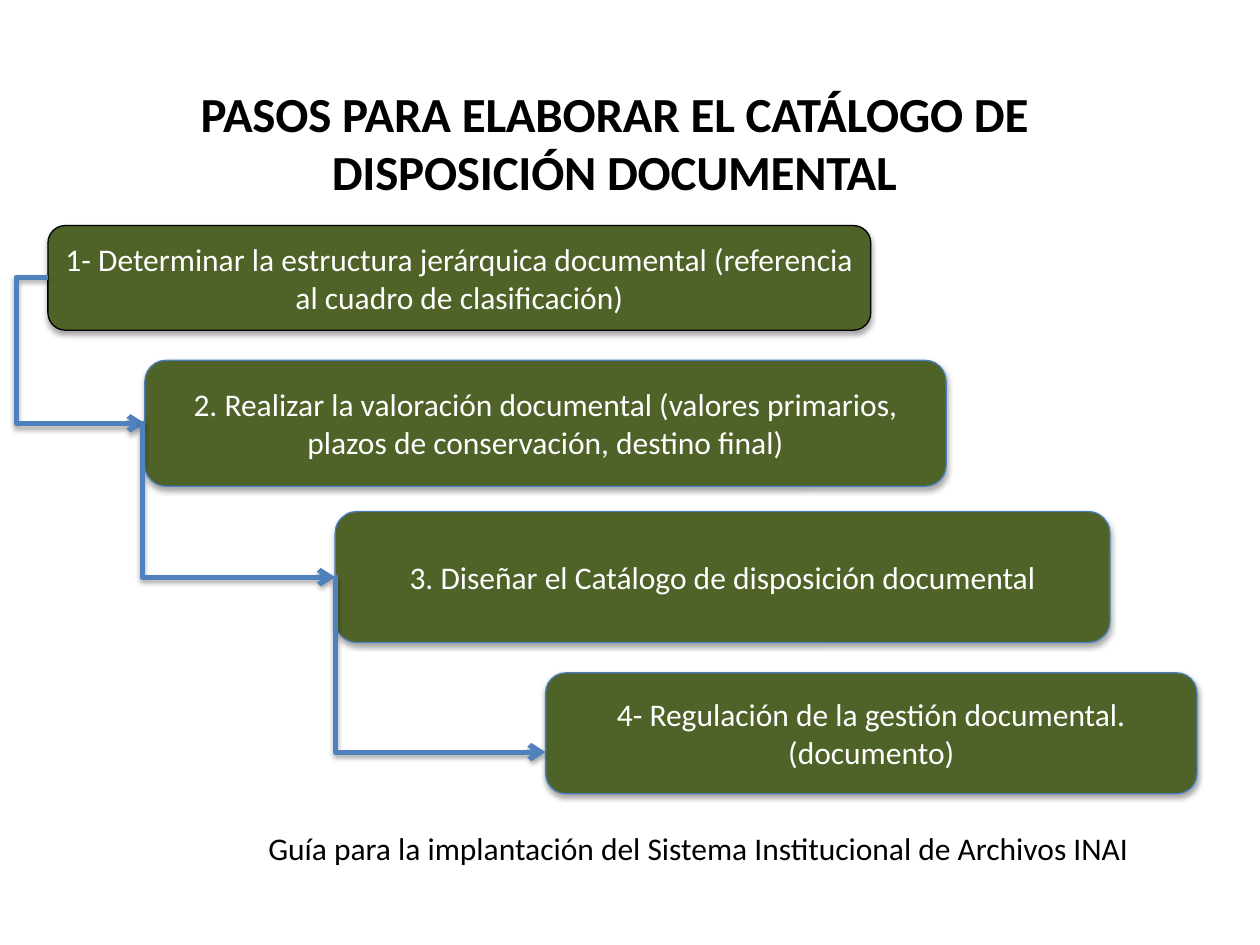
from lxml import etree
from pptx import Presentation
from pptx import util as u
from pptx.dml.color import RGBColor
from pptx.enum import shapes, text
from pptx.oxml.ns import qn

Pt = u.Pt
COLORS = {"box": "4F6228", "edge": "4B7EBC", "arrow": "4F81BD",
          "black": "000000", "white": "FFFFFF"}


def add_text(shape, words, size, color, align, bold=False):
    paragraph = shape.text_frame.paragraphs[0]
    paragraph.alignment = align
    run = paragraph.add_run()
    run.text = words
    run.font.name = "Calibri"
    run.font.size = Pt(size)
    run.font.bold = bold
    run.font.color.rgb = RGBColor.from_string(COLORS[color])
    return run


def add_shadow(properties):
    """Soft shadow straight below; call once fill and line are set."""
    effects = etree.SubElement(properties, qn("a:effectLst"))
    shadow = etree.SubElement(effects, qn("a:outerShdw"), blurRad=str(Pt(3.1)),
                              dist=str(Pt(1.8)), dir="5400000", rotWithShape="0")
    color = etree.SubElement(shadow, qn("a:srgbClr"), val=COLORS["black"])
    etree.SubElement(color, qn("a:alpha"), val="35000")


presentation = Presentation()
presentation.slide_width, presentation.slide_height = Pt(720), Pt(540)
slide = presentation.slides.add_slide(presentation.slide_layouts[6])

# Title
title = slide.shapes.add_textbox(Pt(101.5), Pt(46.1), Pt(499), Pt(69.1))
frame = title.text_frame
frame.word_wrap = True
frame.vertical_anchor = text.MSO_ANCHOR.MIDDLE
frame.margin_left = frame.margin_right = frame.margin_bottom = 0
frame.margin_top = Pt(0.9)
run = add_text(title, "PASOS PARA ELABORAR EL CATÁLOGO DE DISPOSICIÓN DOCUMENTAL",
               28, "black", text.PP_ALIGN.CENTER, bold=True)
run.font._element.set("spc", "-10")

# Source line
source = slide.shapes.add_textbox(Pt(146.2), Pt(470.2), Pt(507.6), Pt(28.8))
source.text_frame.word_wrap = False
add_text(source, "Guía para la implantación del Sistema Institucional de Archivos INAI",
         18, "black", text.PP_ALIGN.LEFT)

# Steps: left, top, width, height, edge colour, wording
steps = [
    (27.4, 128.9, 470.2, 59.8, "black",
     "1- Determinar la estructura jerárquica documental (referencia al cuadro de clasificación)"),
    (82.8, 205.9, 457.9, 72, "edge",
     "2. Realizar la valoración documental (valores primarios, plazos de conservación, destino final)"),
    (191.5, 292.3, 442.8, 74.9, "edge",
     "3. Diseñar el Catálogo de disposición documental"),
    (311.8, 384.5, 372.2, 69.1, "edge",
     "4- Regulación de la gestión documental. (documento)"),
]
for left, top, width, height, edge, words in steps:
    box = slide.shapes.add_shape(shapes.MSO_SHAPE.ROUNDED_RECTANGLE,
                                 Pt(left), Pt(top), Pt(width), Pt(height))
    box.fill.solid()
    box.fill.fore_color.rgb = RGBColor.from_string(COLORS["box"])
    box.line.color.rgb = RGBColor.from_string(COLORS[edge])
    box.line.width = Pt(0.75)
    add_shadow(box._element.spPr)
    box.text_frame.word_wrap = True
    box.text_frame.vertical_anchor = text.MSO_ANCHOR.MIDDLE
    add_text(box, words, 18, "white", text.PP_ALIGN.CENTER)

# Elbow arrows run from the left side of each step to that of the next
joints = [(27.4, 158.4), (82.8, 241.9), (191.5, 329.8), (311.8, 429.8)]
bends = [9.4, 81.3, 191.8]
for (x1, y1), (x2, y2), bend in zip(joints, joints[1:], bends):
    arrow = slide.shapes.add_connector(shapes.MSO_CONNECTOR.ELBOW,
                                       Pt(x1), Pt(y1), Pt(x2), Pt(y2))
    arrow.line.color.rgb = RGBColor.from_string(COLORS["arrow"])
    arrow.line.width = Pt(3)
    etree.SubElement(arrow.line._get_or_add_ln(), qn("a:tailEnd"), type="arrow")
    properties = arrow._element.spPr
    adjust = round((bend - x1) / (x2 - x1) * 100000)
    etree.SubElement(properties.find(".//" + qn("a:avLst")), qn("a:gd"),
                     name="adj1", fmla=f"val {adjust}")
    add_shadow(properties)

presentation.save("out.pptx")
